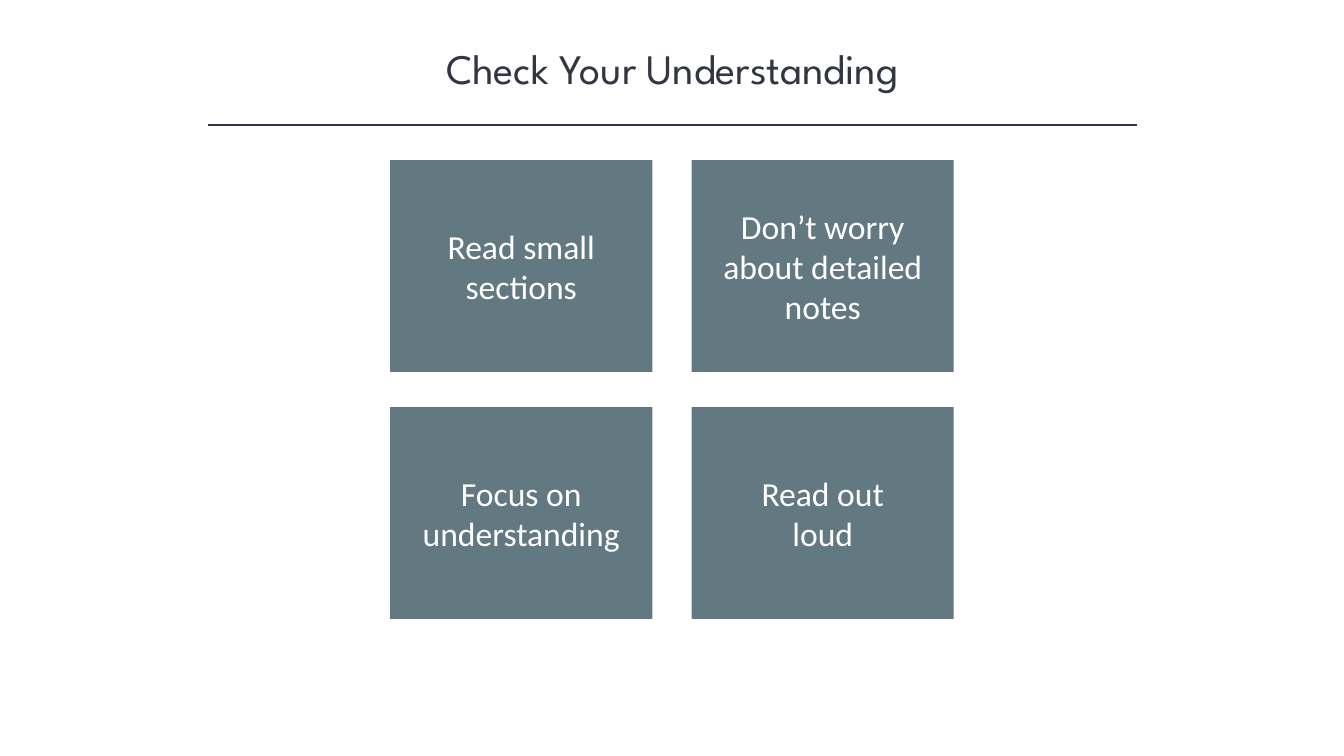
"""Build the Check Your Understanding slide: a ruled title above a two by two grid of cards."""
import pptx
import pptx.dml.color
import pptx.enum.shapes
import pptx.enum.text
import pptx.oxml
import pptx.util

Inches = pptx.util.Inches

TITLE = "Check Your Understanding"
CARDS = [
    {"text": "Read small sections", "text_w": 1.82, "text_h": 0.91},
    {"text": "Don’t worry about detailed notes", "text_w": 2.25, "text_h": 1.31},
    {"text": "Focus on understanding", "text_w": 2.24, "text_h": 0.91},
    {"text": "Read out loud", "text_w": 1.82, "text_h": 0.91},
]
THEME = {
    "ink": "323542", "card": "627981", "white": "FFFFFF",
    "title_font": "League Spartan", "body_font": "Calibri",
    "title_size": 30, "body_size": 24, "rule_width": 1,
}
COLUMNS = 2
GRID_LEFT, GRID_TOP = 3.87, 1.59
CARD_W, CARD_H = 2.6, 2.1
STEP_X, STEP_Y = 2.99, 2.45


def rgb(name):
    """Return a theme colour."""
    return pptx.dml.color.RGBColor.from_string(THEME[name])


def add_text(shapes, text, box, *, font, size, color, anchor):
    """Add a centred, wrapping text box."""
    s = shapes.add_textbox(*map(Inches, box))
    tf = s.text_frame
    tf.word_wrap = True
    tf.auto_size = pptx.enum.text.MSO_AUTO_SIZE.SHAPE_TO_FIT_TEXT
    tf.vertical_anchor = anchor
    p = tf.paragraphs[0]
    p.alignment = pptx.enum.text.PP_ALIGN.CENTER
    r = p.add_run()
    r.text = text
    r.font.name = THEME[font]
    r.font.size = pptx.util.Pt(THEME[size])
    r.font.color.rgb = rgb(color)


def add_rule(shapes, x1, x2, y):
    """Add the thin line under the title."""
    s = shapes.add_connector(pptx.enum.shapes.MSO_CONNECTOR.STRAIGHT,
                             *map(Inches, (x1, y, x2, y)))
    s.line.color.rgb = rgb("ink")
    s.line.width = pptx.util.Pt(THEME["rule_width"])
    s._element.spPr.append(pptx.oxml.parse_xml(
        '<a:effectLst xmlns:a="http://schemas.openxmlformats.org/drawingml/2006/main"/>'))


def add_card(shapes, card, left, top):
    """Add a filled card with its text centred, as one group."""
    group = shapes.add_group_shape()
    s = group.shapes.add_shape(pptx.enum.shapes.MSO_SHAPE.RECTANGLE,
                               *map(Inches, (left, top, CARD_W, CARD_H)))
    s.shadow.inherit = False
    s.fill.solid()
    s.fill.fore_color.rgb = rgb("card")
    s.line.fill.background()
    w, h = card["text_w"], card["text_h"]
    box = (left + (CARD_W - w) / 2, top + (CARD_H - h) / 2, w, h)
    add_text(group.shapes, card["text"], box, font="body_font", size="body_size",
             color="white", anchor=pptx.enum.text.MSO_ANCHOR.MIDDLE)


def main():
    """Lay out the slide and save it."""
    prs = pptx.Presentation()
    prs.slide_width, prs.slide_height = Inches(13.33), Inches(7.5)
    shapes = prs.slides.add_slide(prs.slide_layouts[6]).shapes
    add_text(shapes, TITLE, (1.67, 0.37, 10, 0.61), font="title_font", size="title_size",
             color="ink", anchor=pptx.enum.text.MSO_ANCHOR.TOP)
    add_rule(shapes, 2.06, 11.28, 1.24)
    for i, card in enumerate(CARDS):
        row, col = divmod(i, COLUMNS)
        add_card(shapes, card, GRID_LEFT + col * STEP_X, GRID_TOP + row * STEP_Y)
    prs.save("out.pptx")


if __name__ == "__main__":
    main()
